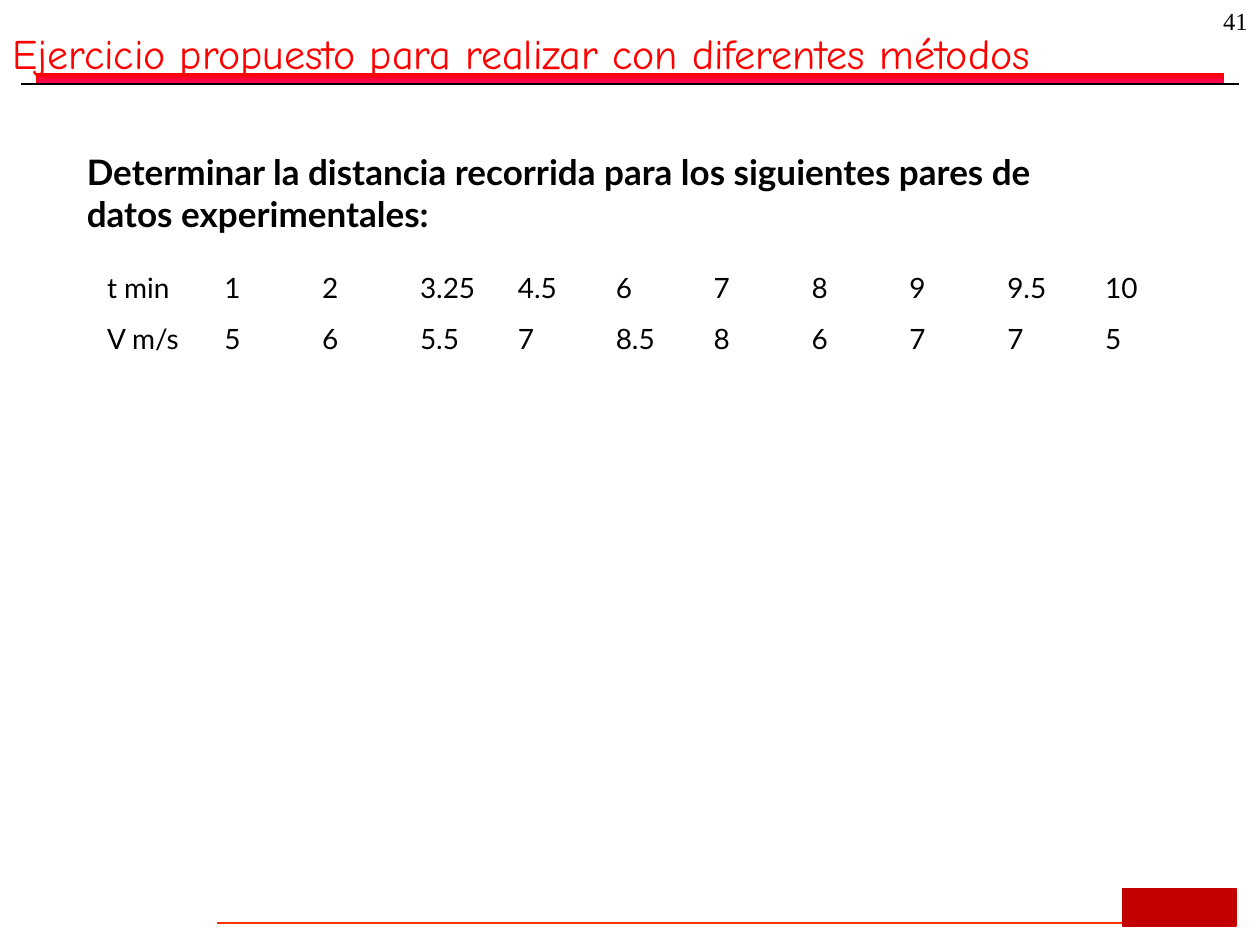
from dataclasses import dataclass

from lxml import etree
from pptx import Presentation
from pptx import util as u
from pptx.dml.color import RGBColor
from pptx.enum import shapes, text

WIDTH, HEIGHT = 10, 7.5


@dataclass(frozen=True)
class Theme:
    red: str = "FF0000"
    pink: str = "FF0066"
    orange: str = "FF3300"
    emblem: str = "C20000"
    black: str = "000000"
    title_font: str = "Comic Neue"
    body_font: str = "Lato"
    number_font: str = "Times New Roman"
    title: int = 24
    body: int = 20
    cell: int = 16
    number: int = 14


THEME = Theme()

DATA = [
    ["t min", "1", "2", "3.25", "4.5", "6", "7", "8", "9", "9.5", "10"],
    ["V m/s", "5", "6", "5.5", "7", "8.5", "8", "6", "7", "7", "5"],
]


def box(left, top, width, height):
    """Turn shares of the slide's size into lengths."""
    return (u.Inches(left * WIDTH), u.Inches(top * HEIGHT),
            u.Inches(width * WIDTH), u.Inches(height * HEIGHT))


def style(p, font, size, color, bold=False):
    p.font.name = font
    p.font.size = u.Pt(size)
    p.font.bold = bold
    p.font.color.rgb = RGBColor.from_string(color)


def add_text(slide, words, place, font, size, color=THEME.black, bold=False,
             align=text.PP_ALIGN.LEFT):
    tf = slide.shapes.add_textbox(*box(*place)).text_frame
    tf.word_wrap = True
    p = tf.paragraphs[0]
    p.text = words
    p.alignment = align
    style(p, font, size, color, bold)


def add_bar(slide, place, color, end_color=None):
    """Add a rectangle, shaded downwards if it has an end colour."""
    sp = slide.shapes.add_shape(shapes.MSO_SHAPE.RECTANGLE, *box(*place))
    sp.shadow.inherit = False
    if end_color:
        sp.fill.gradient()
        sp.fill.gradient_angle = 270
        for stop, shade in zip(sp.fill.gradient_stops, (color, end_color)):
            stop.color.rgb = RGBColor.from_string(shade)
    else:
        sp.fill.solid()
        sp.fill.fore_color.rgb = RGBColor.from_string(color)
    sp.line.color.rgb = RGBColor.from_string(color)
    sp.line.width = u.Pt(0.75)


def add_rule(slide, start, end, y, color, width):
    """Add a horizontal line between two shares of the slide's width."""
    x1, top, x2, _ = box(start, y, end, 0)
    line = slide.shapes.add_connector(shapes.MSO_CONNECTOR.STRAIGHT,
                                      x1, top, x2, top)
    line.line.color.rgb = RGBColor.from_string(color)
    line.line.width = u.Pt(width)
    ns = "http://schemas.openxmlformats.org/drawingml/2006/main"
    etree.SubElement(line._element.spPr, f"{{{ns}}}effectLst")


def add_data_table(slide, rows, place, label_width):
    """Add an unfilled table: a label column, then equal value columns."""
    left, top, width, height = box(*place)
    table = slide.shapes.add_table(len(rows), len(rows[0]),
                                   left, top, width, height).table
    label, *values = table.columns
    label.width = u.Inches(label_width * WIDTH)
    for column in values:
        column.width = (width - label.width) // len(values)
    for r, row in enumerate(rows):
        for c, value in enumerate(row):
            cell = table.cell(r, c)
            cell.text = value
            cell.fill.background()
            style(cell.text_frame.paragraphs[0], THEME.body_font, THEME.cell,
                  THEME.black)


def main():
    prs = Presentation()
    prs.slide_width, prs.slide_height = u.Inches(WIDTH), u.Inches(HEIGHT)
    slide = prs.slides.add_slide(prs.slide_layouts[6])

    add_bar(slide, (0.029, 0.078, 0.942, 0.011), THEME.red, THEME.pink)
    add_rule(slide, 0.017, 0.983, 0.089, THEME.black, 0.75)
    add_rule(slide, 0.891, 0.172, 0.977, THEME.orange, 1)
    add_bar(slide, (0.891, 0.94, 0.09, 0.04), THEME.emblem)

    add_text(slide, "41", (0.9, 0, 0.1, 0.044), THEME.number_font,
             THEME.number, align=text.PP_ALIGN.RIGHT)
    add_text(slide, "Ejercicio propuesto para realizar con diferentes métodos",
             (0, 0.023, 0.925, 0.079), THEME.title_font, THEME.title,
             THEME.red)
    add_data_table(slide, DATA, (0.075, 0.28, 0.87, 0.108), 0.093)
    add_text(slide, "Determinar la distancia recorrida para los siguientes "
             "pares de datos experimentales:", (0.059, 0.153, 0.781, 0.103),
             THEME.body_font, THEME.body, bold=True)

    prs.save("out.pptx")


if __name__ == "__main__":
    main()
